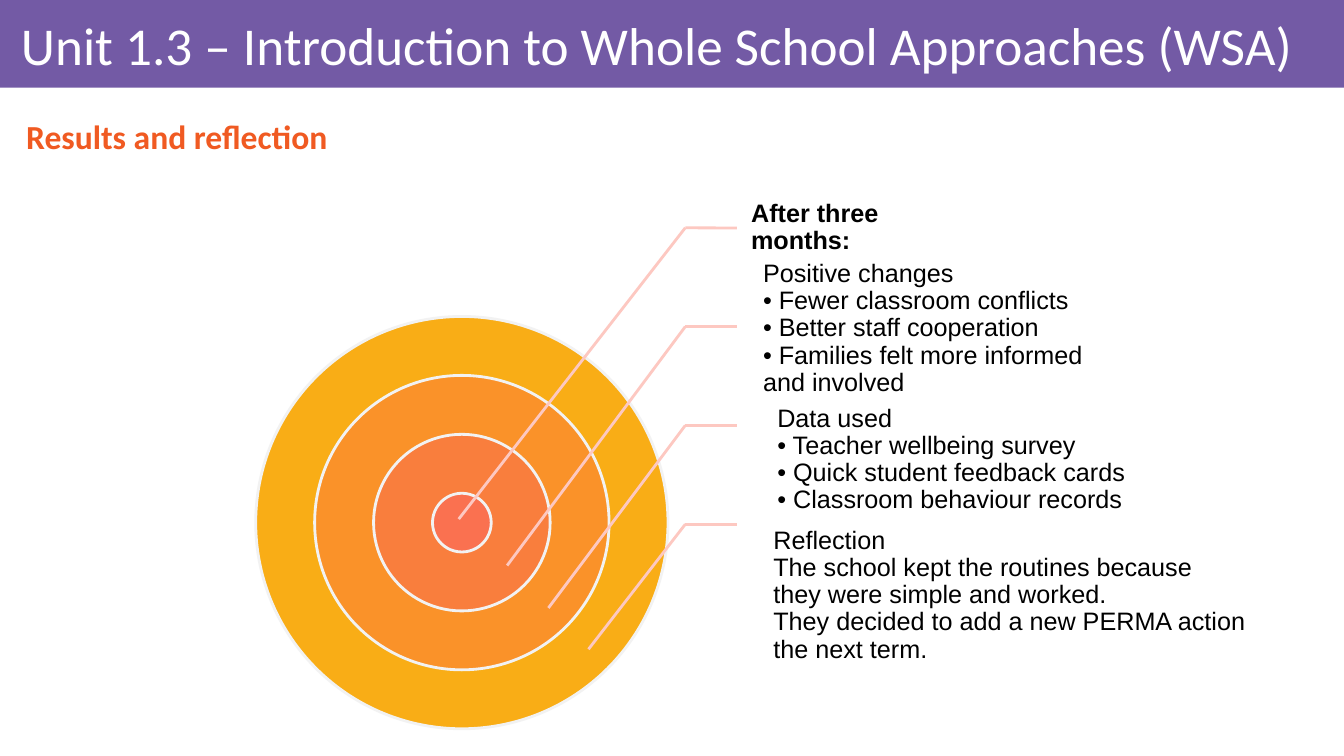
"""Build the "Results and reflection" slide with its target diagram and callouts."""
from dataclasses import dataclass

from lxml.etree import SubElement
from pptx import Presentation
from pptx.dml.color import RGBColor
from pptx.enum.shapes import MSO_CONNECTOR, MSO_SHAPE
from pptx.enum.text import MSO_ANCHOR
from pptx.oxml.ns import qn
from pptx.shapes.autoshape import Shape
from pptx.shapes.connector import Connector
from pptx.slide import Slide
from pptx.util import Cm, Pt

PURPLE = RGBColor(0x73, 0x5A, 0xA5)
ORANGE = RGBColor(0xF0, 0x5A, 0x22)
PINK = RGBColor(0xFD, 0xC8, 0xC1)
PALE_GREY = RGBColor(0xF2, 0xF2, 0xF2)
WHITE = RGBColor(0xFF, 0xFF, 0xFF)
BLACK = RGBColor(0, 0, 0)
RING_COLOURS = (
    RGBColor(0xF9, 0xAD, 0x16),
    RGBColor(0xFA, 0x92, 0x29),
    RGBColor(0xF9, 0x7E, 0x3D),
    RGBColor(0xFA, 0x71, 0x50),
)

SLIDE_WIDTH, SLIDE_HEIGHT, BANNER_HEIGHT = 33.87, 19.05, 2.21
TARGET_X, TARGET_Y = 11.64, 13.17
CORE_DIAMETER, RING_STEP = 1.48, 2.97
ELBOW_X, SHELF_END_X = 17.27, 18.57
FIRST_SHELF_Y, SHELF_STEP = 5.74, 2.49
RULE_WIDTH = Pt(2)


@dataclass(frozen=True)
class Area:
    """A rectangle in centimetres."""
    left: float
    top: float
    width: float
    height: float


@dataclass(frozen=True)
class Style:
    """The look of a text and its insets: left, right, top and bottom."""
    font: str
    size: float
    colour: RGBColor
    bold: bool
    insets: tuple[float, float, float, float]


@dataclass(frozen=True)
class Callout:
    """A note beside the target and the point its leader reaches."""
    text: str
    area: Area
    tip: tuple[float, float]
    bold: bool = False


CALLOUTS = (
    Callout("After three months:", Area(18.57, 4.5, 5.18, 2.49), (11.56, 13.08), True),
    Callout(
        "Positive changes\n• Fewer classroom conflicts\n• Better staff cooperation\n"
        "• Families felt more informed and involved",
        Area(18.87, 7.04, 9.04, 2.49), (12.78, 14.25),
    ),
    Callout(
        "Data used\n• Teacher wellbeing survey\n• Quick student feedback cards\n"
        "• Classroom behaviour records",
        Area(19.23, 10.34, 12.73, 2.49), (13.82, 15.32),
    ),
    Callout(
        "Reflection\nThe school kept the routines because they were simple and worked.\n"
        "They decided to add a new PERMA action the next term.",
        Area(19.13, 13.39, 12.34, 3.23), (14.83, 16.36),
    ),
)


def add_filled(slide: Slide, preset: MSO_SHAPE, area: Area, colour: RGBColor) -> Shape:
    """Add a flat filled shape without an outline."""
    shape = slide.shapes.add_shape(
        preset, Cm(area.left), Cm(area.top), Cm(area.width), Cm(area.height))
    shape.shadow.inherit = False
    shape.fill.solid()
    shape.fill.fore_color.rgb = colour
    shape.line.fill.background()
    return shape


def add_text(slide: Slide, text: str, area: Area, style: Style) -> Shape:
    """Add a wrapped, vertically centred text box."""
    box = slide.shapes.add_textbox(
        Cm(area.left), Cm(area.top), Cm(area.width), Cm(area.height))
    frame = box.text_frame
    frame.word_wrap = True
    frame.vertical_anchor = MSO_ANCHOR.MIDDLE
    left, right, top, bottom = style.insets
    frame.margin_left, frame.margin_right = Cm(left), Cm(right)
    frame.margin_top, frame.margin_bottom = Cm(top), Cm(bottom)
    paragraph = frame.paragraphs[0]
    paragraph.text = text
    paragraph.line_spacing = 0.9
    for run in paragraph.runs:
        run.font.name = style.font
        run.font.size = Pt(style.size)
        run.font.bold = style.bold
        run.font.color.rgb = style.colour
    return box


def add_leader(slide: Slide, start: tuple[float, float], end: tuple[float, float]) -> Connector:
    """Add a straight pink leader line."""
    leader = slide.shapes.add_connector(
        MSO_CONNECTOR.STRAIGHT, Cm(start[0]), Cm(start[1]), Cm(end[0]), Cm(end[1]))
    leader.line.color.rgb = PINK
    leader.line.width = RULE_WIDTH
    SubElement(leader.element.spPr, qn("a:effectLst"))
    return leader


def draw_target(slide: Slide) -> None:
    """Draw the concentric rings from the outside in."""
    for rank, colour in enumerate(RING_COLOURS):
        diameter = CORE_DIAMETER + RING_STEP * (len(RING_COLOURS) - 1 - rank)
        area = Area(TARGET_X - diameter / 2, TARGET_Y - diameter / 2, diameter, diameter)
        ring = add_filled(slide, MSO_SHAPE.OVAL, area, colour)
        ring.line.color.rgb = PALE_GREY
        ring.line.width = RULE_WIDTH


def draw_callout(slide: Slide, callout: Callout, shelf_y: float) -> None:
    """Draw a note with its shelf and its slanted leader."""
    style = Style("Arial", 18, BLACK, callout.bold, (0.36, 0.05, 0.05, 0.05))
    note = add_text(slide, callout.text, callout.area, style)
    elbow = (ELBOW_X, shelf_y)
    shelf = add_leader(slide, elbow, (SHELF_END_X, shelf_y))
    if callout.area.left == SHELF_END_X:
        shelf.end_connect(note, 1)
    add_leader(slide, elbow, callout.tip)


def main() -> None:
    """Build and save the slide."""
    deck = Presentation()
    deck.slide_width, deck.slide_height = Cm(SLIDE_WIDTH), Cm(SLIDE_HEIGHT)
    slide = deck.slides.add_slide(deck.slide_layouts[6])
    add_filled(slide, MSO_SHAPE.RECTANGLE, Area(0, 0, SLIDE_WIDTH, BANNER_HEIGHT), PURPLE)
    add_text(
        slide, "Unit 1.3 – Introduction to Whole School Approaches (WSA)",
        Area(0.28, 0.23, 33.17, 1.98),
        Style("Calibri", 38, WHITE, False, (0.25, 0.15, 0.15, 0.15)))
    add_text(
        slide, "Results and reflection", Area(0.41, 2.74, 32.53, 1.52),
        Style("Calibri", 24, ORANGE, True, (0.25, 0.25, 0.13, 0.13)))
    draw_target(slide)
    for rank, callout in enumerate(CALLOUTS):
        draw_callout(slide, callout, FIRST_SHELF_Y + rank * SHELF_STEP)
    deck.save("out.pptx")


if __name__ == "__main__":
    main()
